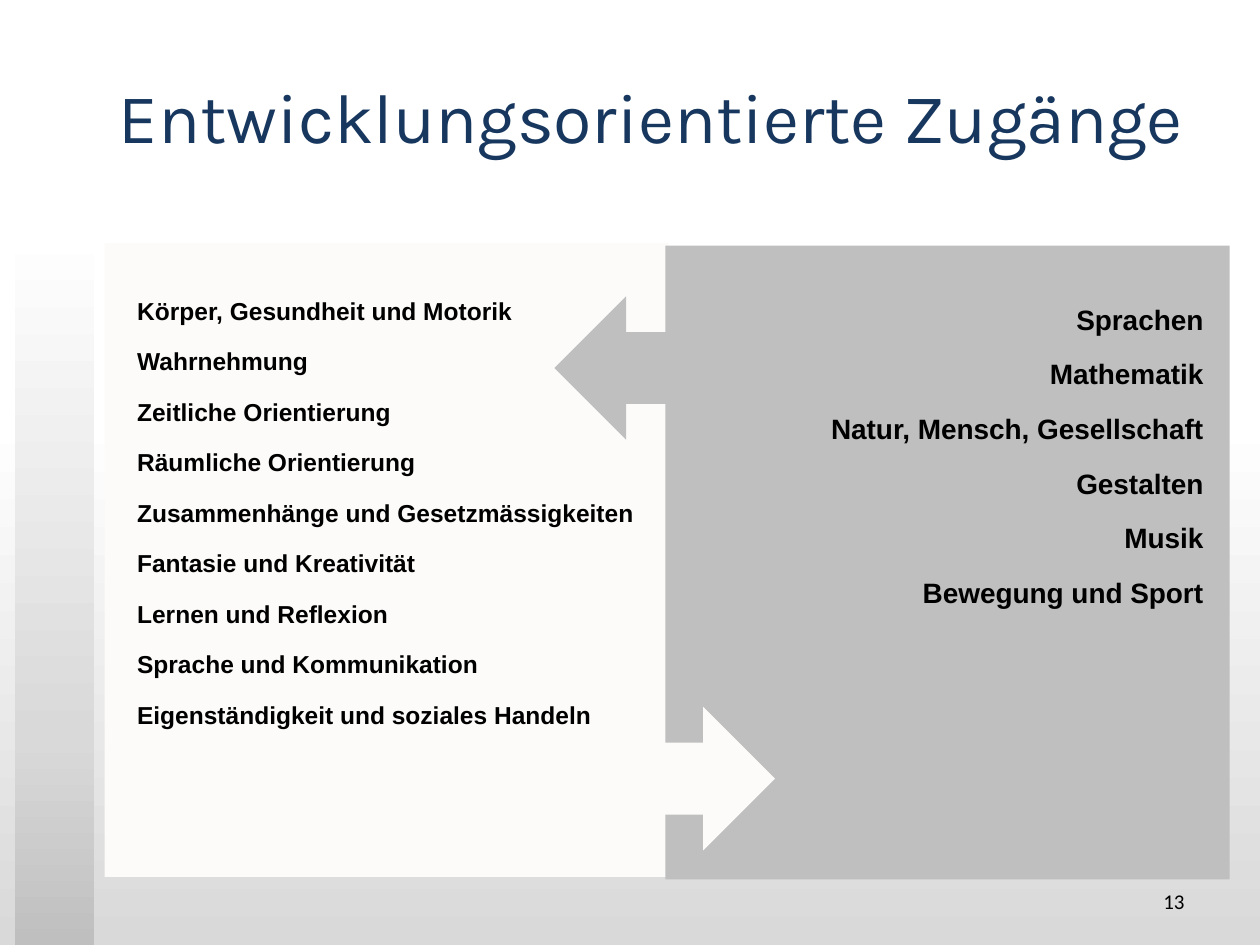
from copy import deepcopy

from pptx import Presentation
from pptx.dml.color import RGBColor
from pptx.enum.shapes import MSO_SHAPE
from pptx.enum.text import MSO_ANCHOR, PP_ALIGN
from pptx.util import Inches, Pt

RECTANGLE = MSO_SHAPE.RECTANGLE
ARROW = MSO_SHAPE.RIGHT_ARROW
LEFT, CENTER, RIGHT = PP_ALIGN.LEFT, PP_ALIGN.CENTER, PP_ALIGN.RIGHT
TOP, MIDDLE = MSO_ANCHOR.TOP, MSO_ANCHOR.MIDDLE

SLIDE_WIDTH, SLIDE_HEIGHT = 10, 7.5
PANEL_SIZE = (4.48, 5.03)
ARROW_SIZE = (1.75, 1.14)
ARROW_LEFT = 4.4
LIGHT, GREY, NAVY, BLACK = "FCFBF9", "BFBFBF", "17375E", "000000"

DEVELOPMENT_AREAS = [
    "Körper, Gesundheit und Motorik",
    "Wahrnehmung",
    "Zeitliche Orientierung",
    "Räumliche Orientierung",
    "Zusammenhänge und Gesetzmässigkeiten",
    "Fantasie und Kreativität",
    "Lernen und Reflexion",
    "Sprache und Kommunikation",
    "Eigenständigkeit und soziales Handeln",
]
SUBJECTS = [
    "Sprachen",
    "Mathematik",
    "Natur, Mensch, Gesellschaft",
    "Gestalten",
    "Musik",
    "Bewegung und Sport",
]


def color(hex_string):
    """Turn a hex string into a colour."""
    return RGBColor.from_string(hex_string)


def set_gradient(fill, stops):
    """Fill from top to bottom with three (position, colour) stops."""
    fill.gradient()
    fill.gradient_angle = 270
    first = fill.gradient_stops[0]._gs
    first.addnext(deepcopy(first))
    for stop, (position, hex_string) in zip(fill.gradient_stops, stops):
        stop.position = position
        stop.color.rgb = color(hex_string)


def add_block(slide, kind, position, size, hex_string=None, rotation=0):
    """Add a preset shape without line or shadow."""
    shape = slide.shapes.add_shape(kind, *map(Inches, position + size))
    shape.shadow.inherit = False
    shape.line.fill.background()
    shape.rotation = rotation
    if hex_string:
        shape.fill.solid()
        shape.fill.fore_color.rgb = color(hex_string)
    return shape


def add_text(slide, lines, position, size, font_name, points,
             alignment=LEFT, anchor=TOP, hex_string=BLACK, bold=False, gap=0):
    """Add a text box with one paragraph per line."""
    box = slide.shapes.add_textbox(*map(Inches, position + size))
    frame = box.text_frame
    frame.word_wrap = True
    frame.vertical_anchor = anchor
    frame.text = "\n".join(lines)
    for index, paragraph in enumerate(frame.paragraphs):
        paragraph.alignment = alignment
        paragraph.space_before = Pt(gap if index else 0)
        paragraph.space_after = Pt(gap)
        paragraph.font.name = font_name
        paragraph.font.size = Pt(points)
        paragraph.font.bold = bold
        paragraph.font.color.rgb = color(hex_string)


def main():
    """Build the slide with two interlocking panels."""
    presentation = Presentation()
    presentation.slide_width = Inches(SLIDE_WIDTH)
    presentation.slide_height = Inches(SLIDE_HEIGHT)
    slide = presentation.slides.add_slide(presentation.slide_layouts[6])

    set_gradient(slide.background.fill,
                 [(0, "FFFFFF"), (0.44, "FFFFFF"), (1, "D9D9D9")])
    side_bar = add_block(slide, RECTANGLE, (0.12, 0), (0.63, SLIDE_HEIGHT))
    set_gradient(side_bar.fill,
                 [(0.24, "FFFFFF"), (0.78, "D9D9D9"), (1, GREY)])

    add_text(slide, ["Entwicklungsorientierte Zugänge"], (0.83, 0.45),
             (8.67, 0.93), "Karla", 40, CENTER, MIDDLE, NAVY)
    add_text(slide, ["13"], (7.17, 6.95), (2.33, 0.4),
             "Calibri", 12, RIGHT, MIDDLE)

    add_block(slide, RECTANGLE, (0.83, 1.93), PANEL_SIZE, LIGHT)
    add_text(slide, DEVELOPMENT_AREAS, (0.99, 2.3), (4.43, 3.99),
             "Arial", 14, bold=True, gap=6)
    add_block(slide, RECTANGLE, (5.28, 1.95), PANEL_SIZE, GREY)
    add_block(slide, ARROW, (ARROW_LEFT, 5.61), ARROW_SIZE, LIGHT)
    add_text(slide, SUBJECTS, (6.3, 2.35), (3.35, 2.67),
             "Arial", 16, RIGHT, bold=True, gap=6)
    add_block(slide, ARROW, (ARROW_LEFT, 2.35), ARROW_SIZE, GREY, 180)

    presentation.save("out.pptx")


if __name__ == "__main__":
    main()
